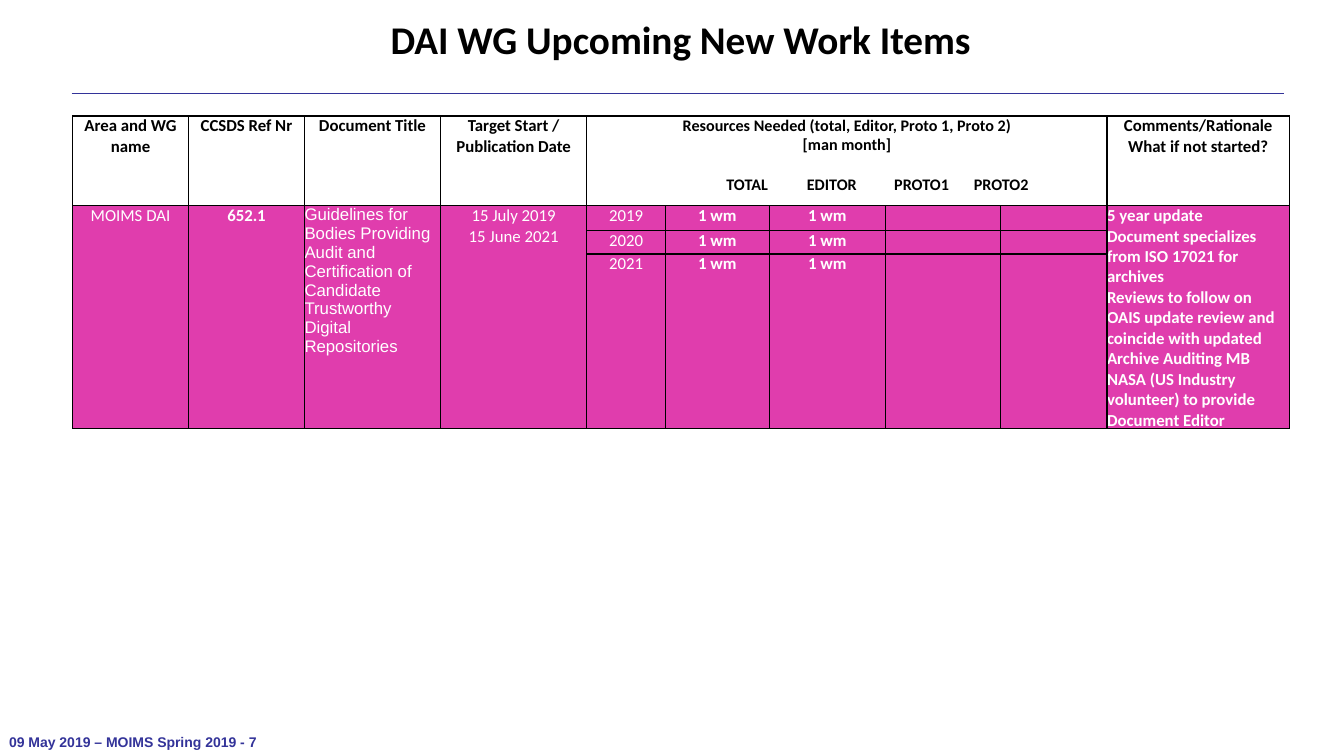
from dataclasses import dataclass

from lxml.etree import SubElement
from pptx import Presentation
from pptx.dml.color import RGBColor
from pptx.enum.shapes import MSO_CONNECTOR
from pptx.enum.text import MSO_ANCHOR, PP_ALIGN
from pptx.oxml.ns import qn
from pptx.util import Inches, Pt


@dataclass(frozen=True)
class Theme:
    heading_font: str = "Calibri"
    body_font: str = "Arial"
    black: str = "000000"
    white: str = "FFFFFF"
    navy: str = "333399"
    magenta: str = "E03DAD"
    title_size: float = 28
    cell_size: float = 12
    resource_size: float = 11.5
    footer_size: float = 10


THEME = Theme()
COLUMN_WIDTHS = [1.15, 1.15, 1.35, 1.45, 0.78, 1.03, 1.15, 1.14, 1.06, 1.81]
ROW_HEIGHTS = [0.89, 0.25, 0.23, 1.73]
RESOURCE_TABS = [1.59, 2.43, 3.32, 4.11]
YEARS = ["2019", "2020", "2021"]
HEADERS = {
    0: "Area and WG name",
    1: "CCSDS Ref Nr",
    2: "Document Title",
    3: "Target Start / Publication Date",
    9: "Comments/Rationale\vWhat if not started?",
}
RESOURCES = (
    "Resources Needed (total, Editor, Proto 1, Proto 2)\n"
    "[man month]\n"
    "\tTOTAL\tEDITOR\tPROTO1\tPROTO2"
)
COMMENTS = (
    "5 year update\n"
    "Document specializes from ISO 17021 for archives\n"
    "Reviews to follow on OAIS update review and coincide with updated Archive Auditing MB\n"
    "NASA (US Industry volunteer) to provide Document Editor"
)
WORK_ITEM = {
    0: ("MOIMS DAI", {}),
    1: ("652.1", {"bold": True}),
    2: (
        "Guidelines for Bodies Providing Audit and Certification of "
        "Candidate Trustworthy Digital Repositories",
        {"font": THEME.body_font, "align": PP_ALIGN.LEFT},
    ),
    3: ("15 July 2019\n15 June 2021", {}),
    9: (COMMENTS, {"bold": True, "align": PP_ALIGN.LEFT}),
}


def format_text(text_frame, size, color, bold=False, font=THEME.heading_font,
                align=PP_ALIGN.CENTER):
    for paragraph in text_frame.paragraphs:
        paragraph.alignment = align
        for run in paragraph.runs:
            run.font.name = font
            run.font.size = Pt(size)
            run.font.bold = bold
            run.font.color.rgb = RGBColor.from_string(color)


def add_title(slide, left, top, width, height):
    title = slide.shapes.title
    title.left, title.top = Inches(left), Inches(top)
    title.width, title.height = Inches(width), Inches(height)
    text_frame = title.text_frame
    text_frame.text = "DAI WG Upcoming New Work Items"
    text_frame.vertical_anchor = MSO_ANCHOR.TOP
    text_frame.margin_left = Inches(0.56)
    text_frame.margin_right = Inches(0.06)
    text_frame.margin_top = text_frame.margin_bottom = Inches(0.06)
    text_frame.paragraphs[0].line_spacing = 0.9
    format_text(text_frame, THEME.title_size, THEME.black, bold=True)


def add_rule(slide, left, top, width):
    rule = slide.shapes.add_connector(
        MSO_CONNECTOR.STRAIGHT, Inches(left), Inches(top), Inches(left + width), Inches(top))
    rule.line.color.rgb = RGBColor.from_string(THEME.navy)
    rule.line.width = Pt(0.13)
    SubElement(rule._element.spPr, qn("a:effectLst"))


def add_footer(slide, left, top, width, height):
    footer = slide.shapes.add_textbox(Inches(left), Inches(top), Inches(width), Inches(height))
    text_frame = footer.text_frame
    text_frame.word_wrap = False
    text_frame.margin_left = text_frame.margin_right = Inches(0.09)
    text_frame.margin_top = text_frame.margin_bottom = Inches(0.04)
    text_frame.text = "09 May 2019 – MOIMS Spring 2019 - 7"
    format_text(text_frame, THEME.footer_size, THEME.navy, True, THEME.body_font, PP_ALIGN.LEFT)


def add_borders(cell):
    properties = cell._tc.get_or_add_tcPr()
    for position, side in enumerate(["a:lnL", "a:lnR", "a:lnT", "a:lnB"]):
        border = properties.makeelement(qn(side), {"w": str(Pt(1))})
        properties.insert(position, border)
        fill = SubElement(border, qn("a:solidFill"))
        SubElement(fill, qn("a:srgbClr"), val=THEME.black)


def prepare_cell(cell, is_header):
    cell.margin_left = cell.margin_right = cell.margin_top = cell.margin_bottom = 0
    if is_header:
        cell.fill.background()
    else:
        cell.fill.solid()
        cell.fill.fore_color.rgb = RGBColor.from_string(THEME.magenta)
    add_borders(cell)
    paragraph = cell.text_frame.paragraphs[0]
    SubElement(paragraph._p, qn("a:endParaRPr"), sz=str(int(THEME.cell_size * 100)))


def write_cell(cell, text, color=THEME.white, size=THEME.cell_size, **options):
    cell.text_frame.text = text
    format_text(cell.text_frame, size, color, **options)


def write_resource_header(cell):
    write_cell(cell, RESOURCES, THEME.black, THEME.resource_size, bold=True)
    labels = cell.text_frame.paragraphs[-1]
    labels.alignment = PP_ALIGN.LEFT
    labels.space_before = Pt(14)
    tabs = SubElement(labels._p.get_or_add_pPr(), qn("a:tabLst"))
    for position in RESOURCE_TABS:
        SubElement(tabs, qn("a:tab"), pos=str(Inches(position)), algn="ctr")


def add_work_items(slide, left, top):
    frame = slide.shapes.add_table(
        len(ROW_HEIGHTS), len(COLUMN_WIDTHS), Inches(left), Inches(top),
        Inches(sum(COLUMN_WIDTHS)), Inches(sum(ROW_HEIGHTS)))
    table = frame.table
    table.first_row = table.horz_banding = False
    for column, width in zip(table.columns, COLUMN_WIDTHS):
        column.width = Inches(width)
    for index, (row, height) in enumerate(zip(table.rows, ROW_HEIGHTS)):
        row.height = Inches(height)
        for cell in row.cells:
            prepare_cell(cell, index == 0)

    for column, text in HEADERS.items():
        write_cell(table.cell(0, column), text, THEME.black, bold=True)
    table.cell(0, 4).merge(table.cell(0, 8))
    write_resource_header(table.cell(0, 4))

    for column, (text, options) in WORK_ITEM.items():
        table.cell(1, column).merge(table.cell(3, column))
        write_cell(table.cell(1, column), text, **options)
    for row, year in enumerate(YEARS, start=1):
        write_cell(table.cell(row, 4), year)
        for column in (5, 6):
            write_cell(table.cell(row, column), "1 wm", bold=True)


def main():
    presentation = Presentation()
    presentation.slide_width = Inches(13.33)
    presentation.slide_height = Inches(7.5)
    slide = presentation.slides.add_slide(presentation.slide_layouts[5])
    add_rule(slide, 0.71, 0.92, 12.02)
    add_footer(slide, 0, 7.24, 2.75, 0.26)
    add_title(slide, 2.13, 0.14, 8.74, 0.58)
    add_work_items(slide, 0.72, 1.15)
    presentation.save("out.pptx")


if __name__ == "__main__":
    main()
